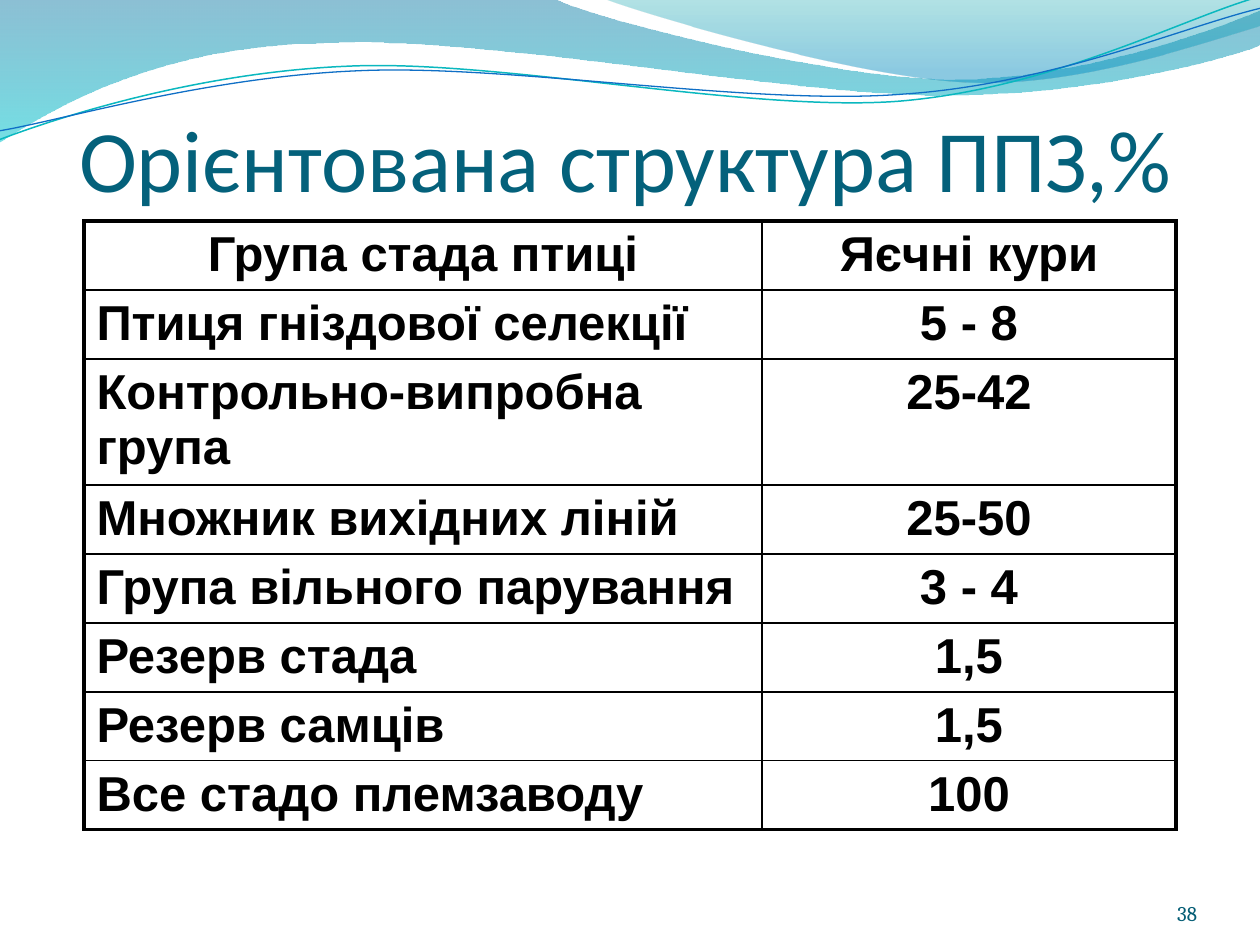
from dataclasses import dataclass

from lxml import etree
from pptx import Presentation
from pptx.dml.color import RGBColor
from pptx.enum.text import MSO_ANCHOR, MSO_AUTO_SIZE, PP_ALIGN
from pptx.oxml.ns import qn
from pptx.util import Emu, Pt

LEFT, CENTER, RIGHT = PP_ALIGN.LEFT, PP_ALIGN.CENTER, PP_ALIGN.RIGHT
BOTTOM = MSO_ANCHOR.BOTTOM
NO_AUTOFIT = MSO_AUTO_SIZE.NONE
TITLE_ONLY = 5
PX = 914400 / 126


@dataclass(frozen=True)
class Theme:
    title: str = "04617B"
    number: str = "045D75"
    ink: str = "000000"
    title_font: str = "Calibri"
    table_font: str = "Arial"
    number_font: str = "Cambria"
    title_size: int = 50
    table_size: int = 28
    number_size: int = 12
    outer_border: float = 2.25
    inner_border: float = 1


THEME = Theme()

# A step of one point is a straight line, a step of three is a Bezier curve.
# Gradient stops are (position, colour, opacity in percent).
WAVES = [
    ((0, 0),
     [[(554, -1)],
      [(600, 21), (837, 79), (955, 79)],
      [(1075, 79), (1207, 33), (1260, 11)],
      [(1261, 45)],
      [(1239, 55), (1096, 96), (940, 95)],
      [(784, 95), (481, 35), (324, 43)],
      [(163, 45), (58, 105), (-1, 142)]],
     [(0, "0074A1", 45), (1, "00C6CF", 55)]),
    ((604, -1),
     [[(641, 14), (859, 78), (969, 82)],
      [(1079, 87), (1211, 40), (1260, 26)],
      [(1260, 0)]],
     [(0, "00A1A9", 30), (0.8, "008BBF", 45)]),
]
STRAND_ROTATION = 357.3
STRANDS = [
    ((-3, 110),
     [[(58, 90), (199, 52), (349, 53)],
      [(499, 53), (745, 118), (896, 114)],
      [(1049, 109), (1184, 45), (1260, 27)]],
     "0AB8BF", 0.85),
    ((-2, 101),
     [[(58, 94), (207, 57), (358, 58)],
      [(509, 58), (750, 112), (902, 107)],
      [(1052, 104), (1188, 52), (1263, 38)]],
     "0F6FC6", 0.75),
]

COLUMN_WIDTHS = (678, 414)
ROW_HEIGHT, TALL_ROW_HEIGHT, TALL_ROW = 69, 126, 2
ROWS = [
    ("Група стада птиці", "Яєчні кури"),
    ("Птиця гніздової селекції", "5 - 8"),
    ("Контрольно-випробна група", "25-42"),
    ("Множник вихідних ліній", "25-50"),
    ("Група вільного парування", "3 - 4"),
    ("Резерв стада", "1,5"),
    ("Резерв самців", "1,5"),
    ("Все стадо племзаводу", "100"),
]


def px(length):
    return Emu(round(length * PX))


def place(shape, left, top, width, height):
    box = {"left": left, "top": top, "width": width, "height": height}
    for name, value in box.items():
        setattr(shape, name, px(value))


def write(frame, text, font, size, color, align, bold=False):
    para = frame.paragraphs[0]
    para.alignment = align
    span = para.add_run()
    span.text = text
    for name, value in {"name": font, "size": Pt(size), "bold": bold}.items():
        setattr(span.font, name, value)
    span.font.color.rgb = RGBColor.from_string(color)
    return para


def format_frame(frame, margin_top=0):
    values = {"word_wrap": True, "auto_size": NO_AUTOFIT, "vertical_anchor": BOTTOM,
              "margin_left": 0, "margin_right": 0, "margin_bottom": 0,
              "margin_top": px(margin_top)}
    for name, value in values.items():
        setattr(frame, name, value)


def add_outline(page, start, steps, closed):
    """Draw the steps as lines, then join each three-point step into a curve."""
    builder = page.shapes.build_freeform(*start, scale=PX)
    builder.add_line_segments([point for step in steps for point in step], close=closed)
    shape = builder.convert_to_shape()
    shape.shadow.inherit = False
    lines = iter(list(shape.element.iter(qn("a:lnTo"))))
    for step in steps:
        parts = [next(lines) for _ in step]
        if len(parts) == 3:
            curve = etree.Element(qn("a:cubicBezTo"))
            parts[0].addprevious(curve)
            for part in parts:
                curve.append(part[0])
                part.getparent().remove(part)
    return shape


def add_wave(page, start, steps, stops):
    wave = add_outline(page, start, steps, closed=True)
    wave.line.fill.background()
    wave.fill.gradient()
    wave.fill.gradient_angle = 270
    for stop, (position, color, _) in zip(wave.fill.gradient_stops, stops):
        stop.position = position
        stop.color.rgb = RGBColor.from_string(color)
    colors = wave.element.spPr.iter(qn("a:srgbClr"))
    for node, (_, _, opacity) in zip(list(colors), stops):
        etree.SubElement(node, qn("a:alpha"), val=str(opacity * 1000))


def add_strand(page, start, steps, color, width):
    strand = add_outline(page, start, steps, closed=False)
    strand.rotation = STRAND_ROTATION
    strand.fill.background()
    strand.line.color.rgb = RGBColor.from_string(color)
    strand.line.width = Pt(width)


def set_title(page, text):
    title = page.shapes.title
    title.element.getparent().append(title.element)  # in front of the waves
    place(title, 79, 42, 1102, 168)
    format_frame(title.text_frame, margin_top=6)
    write(title.text_frame, text, THEME.title_font, THEME.title_size, THEME.title, LEFT)


def set_borders(cell, outer_sides):
    properties = cell._tc.get_or_add_tcPr()
    for index, side in enumerate("LRTB"):
        width = THEME.outer_border if side in outer_sides else THEME.inner_border
        line = etree.Element(qn(f"a:ln{side}"), w=str(Pt(width)))
        fill = etree.SubElement(line, qn("a:solidFill"))
        etree.SubElement(fill, qn("a:srgbClr"), val=THEME.ink)
        properties.insert(index, line)


def set_relative_space_before(para, percent):
    space = etree.Element(qn("a:spcBef"))
    etree.SubElement(space, qn("a:spcPct"), val=str(percent * 1000))
    para._p.get_or_add_pPr().insert(0, space)


def add_flock_table(page):
    heights = [TALL_ROW_HEIGHT if row == TALL_ROW else ROW_HEIGHT for row in range(len(ROWS))]
    table = page.shapes.add_table(len(ROWS), len(COLUMN_WIDTHS), px(84), px(221),
                                  px(sum(COLUMN_WIDTHS)), px(sum(heights))).table
    table.first_row = table.horz_banding = False
    for column, width in zip(table.columns, COLUMN_WIDTHS):
        column.width = px(width)
    for row, (texts, height) in enumerate(zip(ROWS, heights)):
        table.rows[row].height = px(height)
        edge = {0: "T", len(ROWS) - 1: "B"}.get(row, "")
        for column, text in enumerate(texts):
            cell = table.cell(row, column)
            cell.fill.background()
            set_borders(cell, "LR"[column] + edge)
            align = LEFT if row and not column else CENTER
            para = write(cell.text_frame, text, THEME.table_font, THEME.table_size,
                         THEME.ink, align, bold=True)
            set_relative_space_before(para, 20)


def add_page_number(page, text):
    frame = page.shapes.add_textbox(px(1092), px(876), px(105), px(50)).text_frame
    format_frame(frame)
    write(frame, text, THEME.number_font, THEME.number_size, THEME.number, RIGHT)


def main():
    deck = Presentation()
    deck.slide_width, deck.slide_height = px(1260), px(945)
    page = deck.slides.add_slide(deck.slide_layouts[TITLE_ONLY])
    for wave in WAVES:
        add_wave(page, *wave)
    for strand in STRANDS:
        add_strand(page, *strand)
    set_title(page, "Орієнтована структура ППЗ,%")
    add_flock_table(page)
    add_page_number(page, "38")
    deck.save("out.pptx")


if __name__ == "__main__":
    main()
